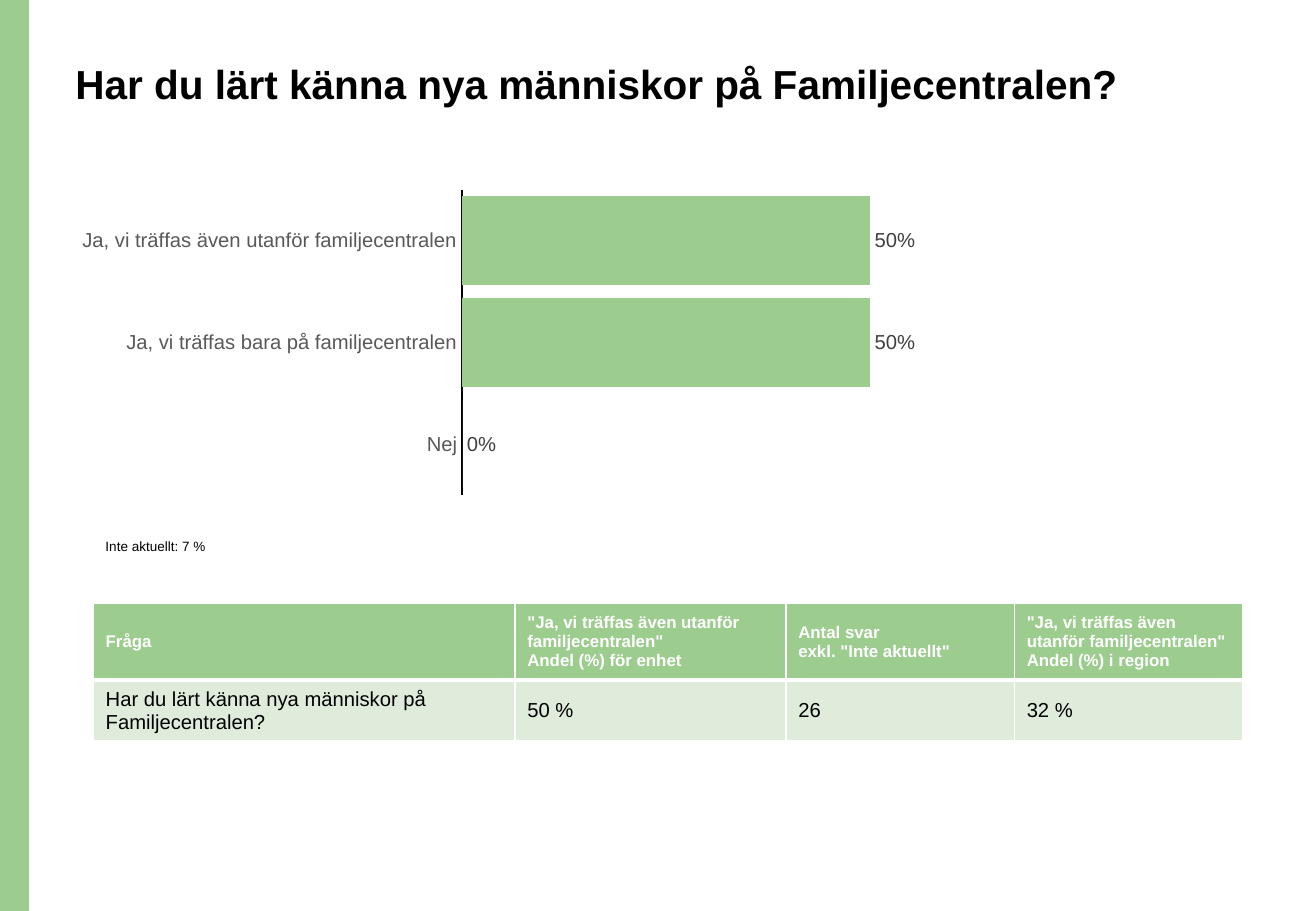
from pptx import Presentation, util as u
from pptx.chart.data import CategoryChartData
from pptx.dml.color import RGBColor
from pptx.enum import chart as charts, shapes, text
from pptx.oxml import parse_xml
from pptx.oxml.ns import nsdecls

QUESTION = "Har du lärt känna nya människor på Familjecentralen?"
YES_OUTSIDE = "Ja, vi träffas även utanför familjecentralen"
GREEN, PALE, WHITE, BLACK = "9DCC8F", "DFECDB", "FFFFFF", "000000"


def color(value):
    return RGBColor.from_string(value)


def px(value):
    """100 px to the inch."""
    return u.Emu(value * 9144)


class SurveyPage:
    font_name = "Arial"

    def __init__(self, deck):
        self.page = deck.slides.add_slide(deck.slide_layouts[5])

    def style(self, font, size, tint=BLACK, bold=False):
        font.name, font.size, font.bold = self.font_name, u.Pt(size), bold
        font.color.rgb = color(tint)

    def lettering(self, frame, content, size, tint=BLACK, bold=False, spacing=None):
        frame.text = content
        for para in frame.paragraphs:
            para.alignment = text.PP_ALIGN.LEFT
            para.line_spacing = spacing
            self.style(para.font, size, tint, bold)

    def bar(self, area, fill):
        box = self.page.shapes.add_shape(shapes.MSO_SHAPE.RECTANGLE, *map(px, area))
        box.shadow.inherit = False
        box.fill.solid()
        box.fill.fore_color.rgb = color(fill)
        box.line.fill.background()

    def title(self, area, content):
        box = self.page.shapes.title
        box.left, box.top, box.width, box.height = map(px, area)
        frame = box.text_frame
        frame.vertical_anchor = text.MSO_ANCHOR.TOP
        frame.auto_size = text.MSO_AUTO_SIZE.NONE
        self.lettering(frame, content, 24, bold=True, spacing=0.9)

    def note(self, area, content):
        frame = self.page.shapes.add_textbox(*map(px, area)).text_frame
        frame.word_wrap = True
        frame.auto_size = text.MSO_AUTO_SIZE.SHAPE_TO_FIT_TEXT
        self.lettering(frame, content, 8, spacing=1.5)

    def chart(self, area, answers):
        data = CategoryChartData(number_format="0%")
        data.categories = list(answers)
        data.add_series("Series 1", list(answers.values()))
        chart = self.page.shapes.add_chart(
            charts.XL_CHART_TYPE.BAR_CLUSTERED, *map(px, area), data).chart
        chart.has_legend = chart.has_title = False
        self.style(chart.font, 10)

        # Axes
        answer_axis, share_axis = chart.category_axis, chart.value_axis
        answer_axis.reverse_order = True
        answer_axis.major_tick_mark = charts.XL_TICK_MARK.NONE
        answer_axis.format.line.color.rgb = color(BLACK)
        answer_axis.format.line.width = u.Pt(0.75)
        self.style(answer_axis.tick_labels.font, 12, "595959")
        share_axis.minimum_scale, share_axis.maximum_scale = 0, 0.6
        share_axis.has_major_gridlines = False
        share_axis.visible = False

        # Bars and labels
        plot = chart.plots[0]
        plot.gap_width, plot.vary_by_categories = 15, False
        fill = plot.series[0].format.fill
        fill.solid()
        fill.fore_color.rgb = color(GREEN)
        labels = plot.series[0].data_labels
        labels.show_value = True
        labels.position = charts.XL_LABEL_POSITION.OUTSIDE_END
        labels.number_format, labels.number_format_is_linked = "0%", False
        self.style(labels.font, 12, "404040")

        # Inner plot area as fractions of the chart
        place = {"x": 0.44, "y": 0.02, "w": 0.54, "h": 0.96}
        modes = "".join(f'<c:{side}Mode val="edge"/>' for side in "xy")
        sizes = "".join(f'<c:{side} val="{part}"/>' for side, part in place.items())
        plot_area = chart._chartSpace.chart.plotArea
        for layout in plot_area.findall("{*}layout"):
            plot_area.remove(layout)
        plot_area.insert(0, parse_xml(
            f'<c:layout {nsdecls("c")}><c:manualLayout><c:layoutTarget val="inner"/>'
            f"{modes}{sizes}</c:manualLayout></c:layout>"))

    def borders(self, cell, widths):
        properties = cell._tc.get_or_add_tcPr()
        for place, (side, points) in enumerate(zip("LRTB", widths)):
            properties.insert(place, parse_xml(
                f'<a:ln{side} {nsdecls("a")} w="{u.Pt(points)}"><a:solidFill>'
                f'<a:srgbClr val="{WHITE}"/></a:solidFill></a:ln{side}>'))

    def table(self, area, widths, heights, rows):
        grid = self.page.shapes.add_table(len(rows), len(widths), *map(px, area)).table
        grid.horz_banding = False
        for column, width in zip(grid.columns, widths):
            column.width = px(width)
        looks = [(GREEN, (10, WHITE, True), (1, 1, 1, 3)),
                 (PALE, (12, BLACK, False), (1, 1, 3, 1))]
        for row, height, contents, look in zip(grid.rows, heights, rows, looks):
            row.height = px(height)
            fill, letters, lines = look
            for cell, content in zip(row.cells, contents):
                cell.fill.solid()
                cell.fill.fore_color.rgb = color(fill)
                cell.vertical_anchor = text.MSO_ANCHOR.MIDDLE
                self.lettering(cell.text_frame, content, *letters)
                self.borders(cell, lines)


def main():
    deck = Presentation()
    deck.slide_width, deck.slide_height = px(1083), px(750)
    survey = SurveyPage(deck)

    # Side band and heading
    survey.bar((0, 0, 24, 750), GREEN)
    survey.title((52, 48, 934, 102), QUESTION)

    # Answers
    survey.chart((52, 151, 746, 262), {
        YES_OUTSIDE: 0.5,
        "Ja, vi träffas bara på familjecentralen": 0.5,
        "Nej": 0,
    })
    survey.note((77, 431, 210, 28), "Inte aktuellt: 7 %")

    # Comparison with the region
    survey.table((77, 497, 946, 86), (347, 223, 188, 188), (63, 23), [
        ("Fråga",
         f'"{YES_OUTSIDE}"\nAndel (%) för enhet',
         'Antal svar\nexkl. "Inte aktuellt"',
         f'"{YES_OUTSIDE}"\nAndel (%) i region'),
        (QUESTION, "50 %", "26", "32 %"),
    ])
    deck.save("out.pptx")


if __name__ == "__main__":
    main()
